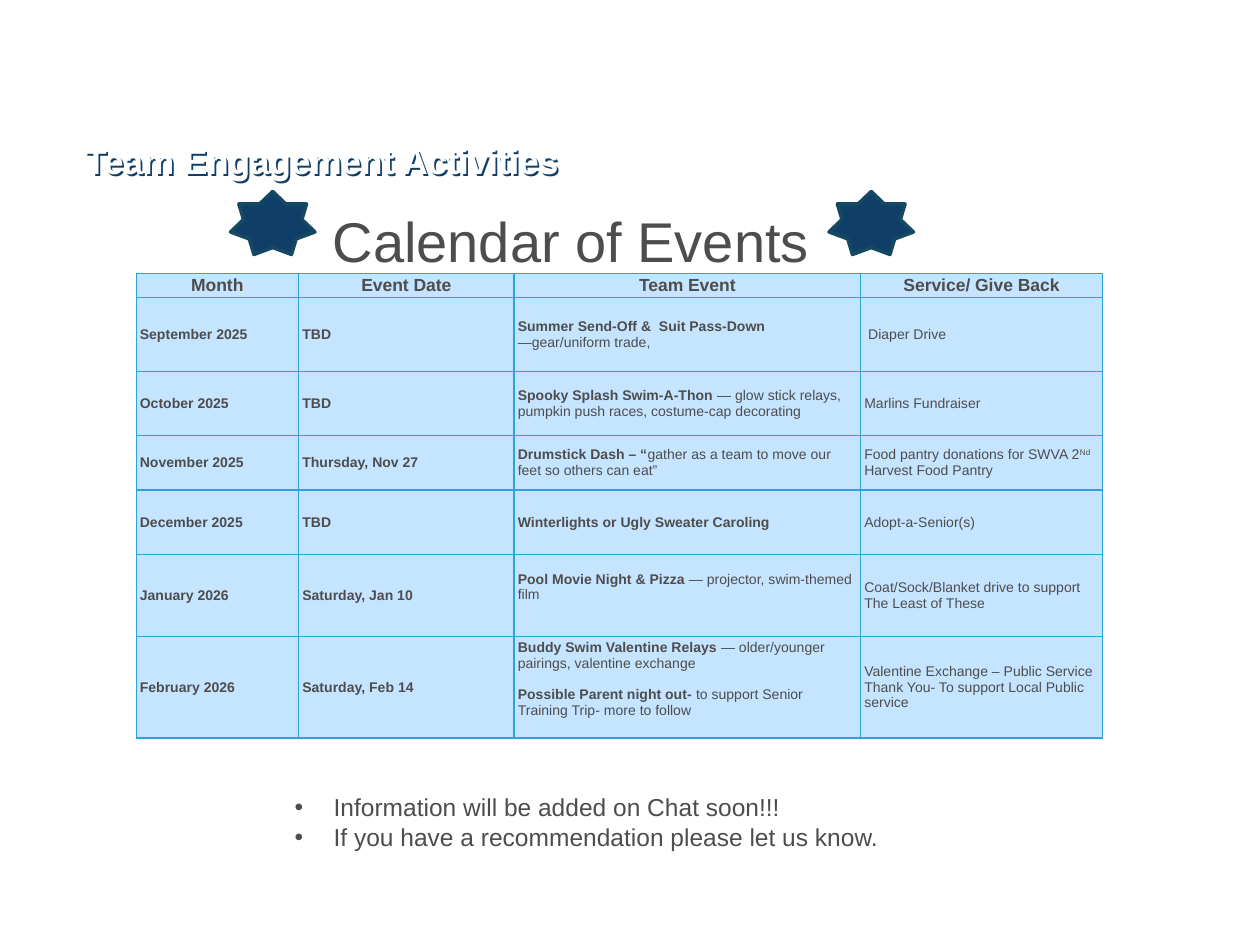
from lxml import etree
from pptx import Presentation
from pptx import util as u
from pptx.dml.color import RGBColor
from pptx.enum import shapes, text
from pptx.oxml import parse_xml
from pptx.oxml.ns import nsdecls, qn

COLORS = {"ink": "4D4D4D", "white": "FFFFFF", "navy": "0F3F68",
          "edge": "154962", "grid": "2BA4DE", "cell": "C5E4FF"}


def color(name):
    return RGBColor.from_string(COLORS[name])


def style(font, size, name="ink", bold=False):
    font.name, font.size, font.bold = "Arial", u.Pt(size), bold
    font.color.rgb = color(name)


prs = Presentation()
prs.slide_width, prs.slide_height = u.Inches(10), u.Inches(7.5)
s = prs.slides.add_slide(prs.slide_layouts[6])

title = s.shapes.add_textbox(u.Inches(0.58), u.Inches(0.22), u.Inches(5), u.Inches(1.27))
tf = title.text_frame
tf.word_wrap = True
tf.vertical_anchor = text.MSO_ANCHOR.BOTTOM
tf.text = "Team Engagement Activities"
style(tf.paragraphs[0].runs[0].font, 20, "white", True)
title._element.spPr.append(parse_xml(
    f'<a:effectLst {nsdecls("a")}><a:outerShdw dist="18000" dir="2700000">'
    f'<a:srgbClr val="{COLORS["navy"]}"/></a:outerShdw></a:effectLst>'))

heading = s.shapes.add_textbox(u.Inches(2.17), u.Inches(1.55), u.Inches(5.59), u.Inches(0.62))
tf = heading.text_frame
tf.word_wrap = True
tf.margin_left, tf.margin_top = u.Inches(0.47), u.Inches(0.09)
tf.text = "Calendar of Events"
style(tf.paragraphs[0].runs[0].font, 32)

for left in (1.83, 6.58):
    star = s.shapes.add_shape(shapes.MSO_SHAPE.STAR_7_POINT, u.Inches(left),
                              u.Inches(1.52), u.Inches(0.67), u.Inches(0.5))
    star.shadow.inherit = False
    star.fill.solid()
    star.fill.fore_color.rgb = color("navy")
    star.line.color.rgb = color("edge")
    star.line.width = u.Pt(2)

# Asterisks enclose bold text, carets enclose superscript.
events = [
    ("*Month*", "*Event Date*", "*Team Event*", "*Service/ Give Back*"),
    ("*September 2025*", "*TBD*",
     "*Summer Send-Off &  Suit Pass-Down* —gear/uniform trade,", " Diaper Drive"),
    ("*October 2025*", "*TBD*",
     "*Spooky Splash Swim-A-Thon* — glow stick relays, pumpkin push races, "
     "costume-cap decorating", "Marlins Fundraiser"),
    ("*November 2025*", "*Thursday, Nov 27*",
     "*Drumstick Dash – “*gather as a team to move our feet so others can eat”",
     "Food pantry donations for SWVA 2^Nd^ Harvest Food Pantry"),
    ("*December 2025*", "*TBD*", "*Winterlights or Ugly Sweater Caroling*",
     "Adopt-a-Senior(s)"),
    ("*January 2026*", "*Saturday, Jan 10*",
     "*Pool Movie Night & Pizza* — projector, swim-themed film",
     "Coat/Sock/Blanket drive to support The Least of These"),
    ("*February 2026*", "*Saturday, Feb 14*",
     "*Buddy Swim Valentine Relays* — older/younger pairings, valentine exchange\n"
     "*Possible Parent night out- *to support Senior Training Trip- more to follow",
     "Valentine Exchange – Public Service Thank You- To support Local Public service"),
]
widths = [1.29, 1.71, 2.75, 1.92]
heights = [0.19, 0.59, 0.51, 0.43, 0.51, 0.65, 0.78]

frame = s.shapes.add_table(len(events), len(widths), u.Inches(1.08), u.Inches(2.17),
                           u.Inches(sum(widths)), u.Inches(sum(heights)))
table = frame.table
for column, width in zip(table.columns, widths):
    column.width = u.Inches(width)

for i, (row, height) in enumerate(zip(events, heights)):
    table.rows[i].height = u.Inches(height)
    for j, content in enumerate(row):
        cell = table.cell(i, j)
        cell.margin_left = cell.margin_right = u.Inches(0.03)
        cell.margin_top = u.Inches(0.01)
        cell.margin_bottom = u.Inches(0.14 if i >= 5 and j == 2 else 0.01)
        cell.vertical_anchor = text.MSO_ANCHOR.MIDDLE
        tcPr = cell._tc.get_or_add_tcPr()
        for side in ("lnL", "lnR", "lnT", "lnB"):
            line = etree.SubElement(tcPr, qn(f"a:{side}"), w=str(u.Pt(0.75)))
            fill = etree.SubElement(line, qn("a:solidFill"))
            etree.SubElement(fill, qn("a:srgbClr"), val=COLORS["grid"])
        cell.fill.solid()
        cell.fill.fore_color.rgb = color("cell")
        for n, passage in enumerate(content.split("\n")):
            p = cell.text_frame.add_paragraph() if n else cell.text_frame.paragraphs[0]
            if n:
                p.space_before = u.Pt(9)
            if i == 0:
                p.alignment = text.PP_ALIGN.CENTER
            for b, chunk in enumerate(passage.split("*")):
                for k, part in enumerate(chunk.split("^")):
                    if part:
                        r = p.add_run()
                        r.text = part
                        style(r.font, 8 if i else 10, bold=b % 2 == 1)
                        if k % 2:
                            r.font._element.set("baseline", "30000")

notice = s.shapes.add_textbox(u.Inches(2.24), u.Inches(6.24), u.Inches(5), u.Inches(0.57))
tf = notice.text_frame
tf.word_wrap = True
tf.text = ("Information will be added on Chat soon!!!\n"
           "If you have a recommendation please let us know.")
for p in tf.paragraphs:
    pPr = p._p.get_or_add_pPr()
    pPr.set("marL", str(u.Inches(0.31)))
    pPr.set("indent", str(-u.Inches(0.31)))
    etree.SubElement(pPr, qn("a:buFont"), typeface="Arial")
    etree.SubElement(pPr, qn("a:buChar"), char="•")
    style(p.runs[0].font, 14)

prs.save("out.pptx")
